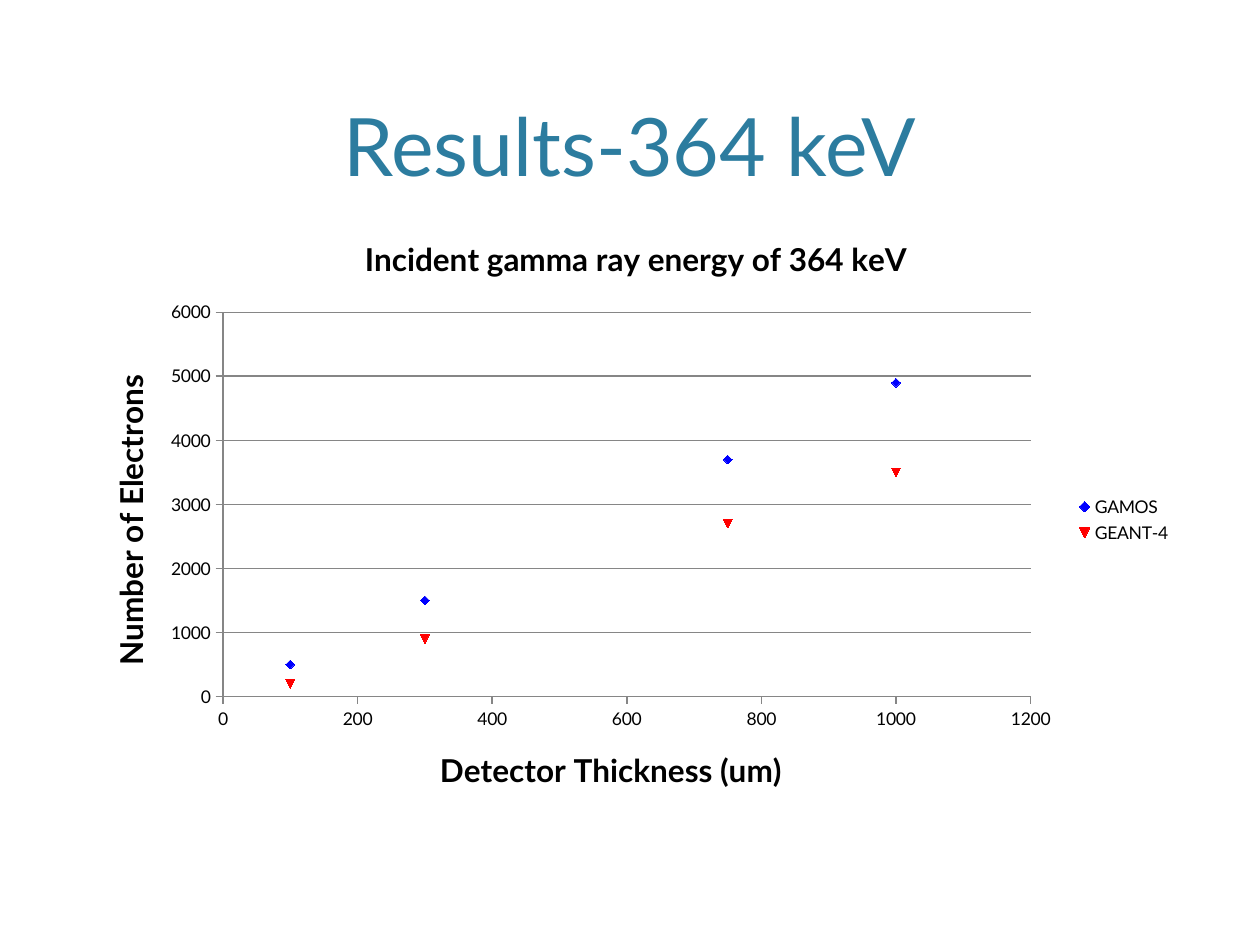
from lxml import etree
from pptx import Presentation
from pptx.chart.data import XyChartData
from pptx.dml.color import RGBColor
from pptx.enum.chart import XL_CHART_TYPE, XL_LEGEND_POSITION, XL_MARKER_STYLE, XL_TICK_MARK
from pptx.enum.text import MSO_ANCHOR, PP_ALIGN
from pptx.oxml.ns import qn
from pptx.util import Inches, Pt

SCATTER = XL_CHART_TYPE.XY_SCATTER
RIGHT = XL_LEGEND_POSITION.RIGHT
AUTO = XL_MARKER_STYLE.AUTOMATIC
OUTSIDE, NO_TICK = XL_TICK_MARK.OUTSIDE, XL_TICK_MARK.NONE
BOTTOM, CENTER = MSO_ANCHOR.BOTTOM, PP_ALIGN.CENTER

TEAL = RGBColor(0x2C, 0x7C, 0x9F)
BLACK = RGBColor(0, 0, 0)
GREY = RGBColor(0x86, 0x86, 0x86)
BLUE = RGBColor(0, 0, 0xFF)
RED = RGBColor(0xFF, 0, 0)
FONT = "Lato"

THICKNESS = (100, 300, 750, 1000)
SERIES = (
    ("GAMOS", BLUE, (500, 1500, 3700, 4900)),
    ("GEANT-4", RED, (200, 900, 2700, 3500)),
)
# Places inside the chart's box, in inches
PLOT = {"x": 1.17, "y": 0.73, "w": 6.41, "h": 3.05}
CHART_TITLE = {"x": 2.25, "y": 0.08}
COUNT_TITLE = {"x": 0.21, "y": 1.18}


def write(tf, text, size, color=BLACK, bold=False):
    p = tf.paragraphs[0]
    p.alignment = CENTER
    r = p.add_run()
    r.text = text
    f = r.font
    f.name, f.size, f.bold = FONT, Pt(size), bold
    f.color.rgb = color


def add_title(s, box, text):
    tf = s.shapes.add_textbox(*box).text_frame
    tf.word_wrap = True
    tf.vertical_anchor = BOTTOM
    write(tf, text, 46, TEAL)


def style_axis(axis, title, top, step):
    write(axis.axis_title.text_frame, title, 18, bold=True)
    axis.minimum_scale, axis.maximum_scale, axis.major_unit = 0, top, step
    axis.major_tick_mark, axis.minor_tick_mark = OUTSIDE, NO_TICK
    axis.has_major_gridlines = False
    axis.format.line.color.rgb = GREY
    axis.format.line.width = Pt(1)


def set_layout(part, place, box, inner=False):
    """Place a chart part by hand; its layout follows the text of a title."""
    for old in part.findall(qn("c:layout")):
        part.remove(old)
    layout = etree.Element(qn("c:layout"))
    manual = etree.SubElement(layout, qn("c:manualLayout"))
    values = {"layoutTarget": "inner"} if inner else {}
    values.update(xMode="edge", yMode="edge")
    for tag, length in place.items():
        values[tag] = Inches(length) / (box[2] if tag in "xw" else box[3])
    for tag, value in values.items():
        etree.SubElement(manual, qn("c:" + tag)).set("val", str(value))
    text = part.find(qn("c:tx"))
    part.insert(0 if text is None else part.index(text) + 1, layout)


def add_scatter(s, box):
    data = XyChartData()
    for name, _, counts in SERIES:
        series = data.add_series(name)
        for x, y in zip(THICKNESS, counts):
            series.add_data_point(x, y)
    chart = s.shapes.add_chart(SCATTER, *box, data).chart
    chart.font.name, chart.font.size = FONT, Pt(10)
    chart.font.color.rgb = BLACK
    chart.has_title = True
    write(chart.chart_title.text_frame, "Incident gamma ray energy of 364 keV", 18, bold=True)

    # Axes and gridlines
    style_axis(chart.category_axis, "Detector Thickness (um)", 1200, 200)
    style_axis(chart.value_axis, "Number of Electrons", 6000, 1000)
    chart.value_axis.has_major_gridlines = True
    grid = chart.value_axis.major_gridlines.format.line
    grid.color.rgb, grid.width = GREY, Pt(1)

    # Plot area and titles
    set_layout(chart._chartSpace.chart.plotArea, PLOT, box, inner=True)
    set_layout(chart.chart_title._element, CHART_TITLE, box)
    set_layout(chart.value_axis.axis_title._element, COUNT_TITLE, box)

    # Legend
    chart.has_legend = True
    chart.legend.position = RIGHT
    chart.legend.include_in_layout = False

    # Markers without joining lines
    chart.plots[0].vary_by_categories = False
    for series, (_, color, _) in zip(chart.plots[0].series, SERIES):
        series.smooth = False
        series.format.line.fill.background()
        marker = series.marker
        marker.style, marker.size = AUTO, 5
        marker.format.fill.solid()
        marker.format.fill.fore_color.rgb = color
        marker.format.line.color.rgb = color


def main():
    prs = Presentation()
    prs.slide_width, prs.slide_height = Inches(10), Inches(7.5)
    s = prs.slides.add_slide(prs.slide_layouts[6])
    left, width = prs.slide_width * 6 // 100, prs.slide_width * 88 // 100
    add_title(s, (left, Inches(0.12), width, Inches(1.46)), "Results-364 keV")
    add_scatter(s, (left, Inches(1.75), width, Inches(4.75)))
    prs.save("out.pptx")


if __name__ == "__main__":
    main()
